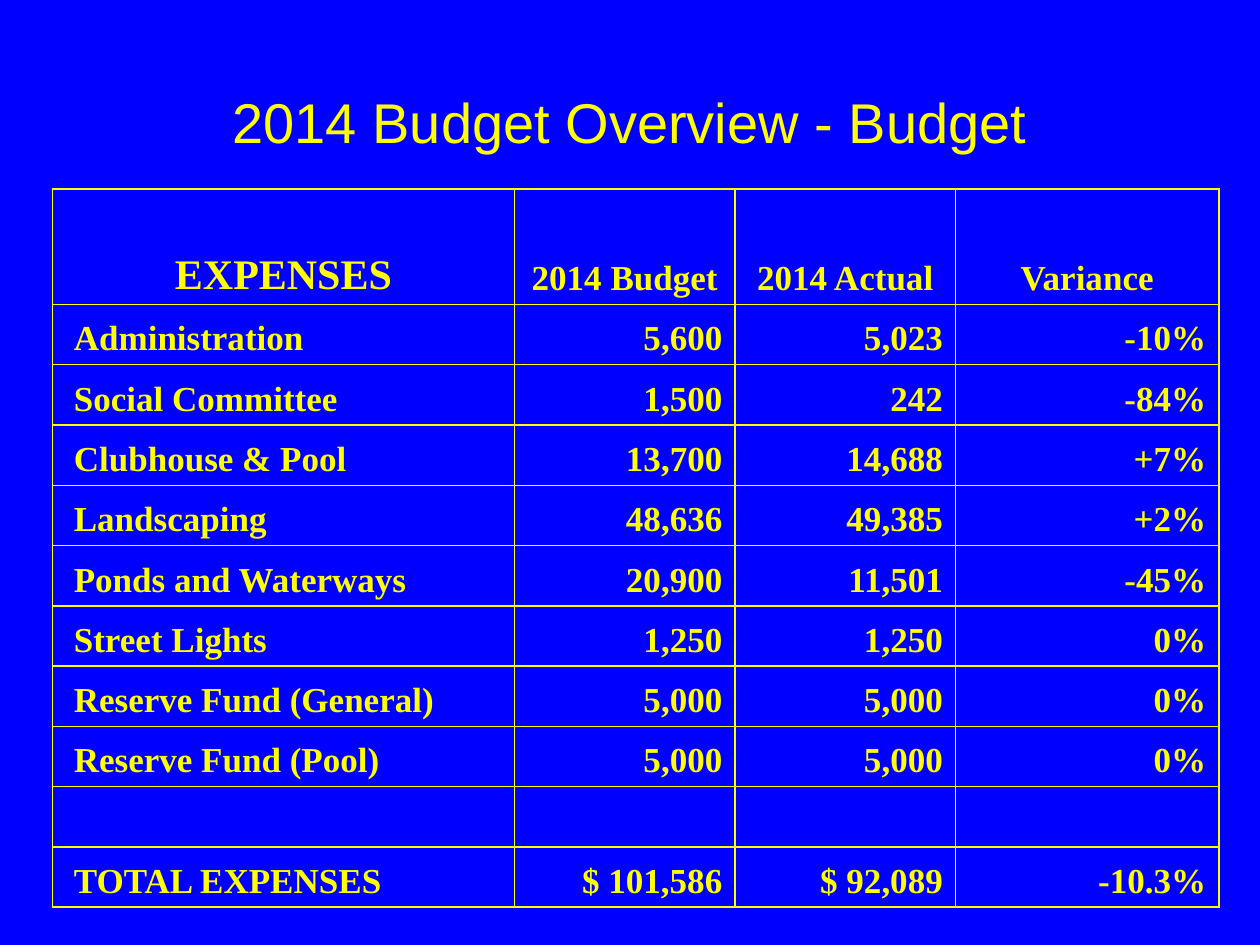
from dataclasses import dataclass

from lxml import etree
from pptx import Presentation
from pptx.dml.color import RGBColor
from pptx.enum import text
from pptx.oxml import ns
from pptx.util import Pt


@dataclass(frozen=True)
class Theme:
    background: str = "0000FF"
    ink: str = "FFFF00"
    title_font: str = "Arial"
    table_font: str = "Times New Roman"
    title_size: float = 32
    heading_size: float = 24
    body_size: float = 20
    border: float = 1


@dataclass(frozen=True)
class Expense:
    name: str = ""
    budget: str = ""
    actual: str = ""
    variance: str = ""

    def values(self) -> tuple:
        return self.name, self.budget, self.actual, self.variance


THEME = Theme()
ALIGN = text.PP_ALIGN
HEADER = Expense("EXPENSES", "2014 Budget", "2014 Actual", "Variance")
EXPENSES = [
    Expense("Administration", "5,600", "5,023", "-10%"),
    Expense("Social Committee", "1,500", "242", "-84%"),
    Expense("Clubhouse & Pool", "13,700", "14,688", "+7%"),
    Expense("Landscaping", "48,636", "49,385", "+2%"),
    Expense("Ponds and Waterways", "20,900", "11,501", "-45%"),
    Expense("Street Lights", "1,250", "1,250", "0%"),
    Expense("Reserve Fund (General)", "5,000", "5,000", "0%"),
    Expense("Reserve Fund (Pool)", "5,000", "5,000", "0%"),
    Expense(),
    Expense("TOTAL EXPENSES", "$ 101,586", "$ 92,089", "-10.3%"),
]
COLUMN_WIDTHS = (264, 126, 126, 150.5)
HEADER_HEIGHT, ROW_HEIGHT = 66, 34.45
NAME_INDENT = 12.2


def write(tf, value: str, font: str, size: float, align, bold: bool = False) -> None:
    tf.text = value
    p = tf.paragraphs[0]
    p.alignment = align
    for r in p.runs:
        r.font.name, r.font.size, r.font.bold = font, Pt(size), bold
        r.font.color.rgb = RGBColor.from_string(THEME.ink)


def add_borders(cell) -> None:
    """Outline all four sides; the lines must precede the cell's fill."""
    tc_pr = cell._tc.get_or_add_tcPr()
    for i, side in enumerate(("a:lnL", "a:lnR", "a:lnT", "a:lnB")):
        ln = etree.Element(ns.qn(side), w=str(Pt(THEME.border)))
        fill = etree.SubElement(ln, ns.qn("a:solidFill"))
        etree.SubElement(fill, ns.qn("a:srgbClr"), val=THEME.ink)
        tc_pr.insert(i, ln)


def add_title(s, value: str) -> None:
    sp = s.shapes.add_textbox(Pt(54), Pt(48), Pt(612), Pt(42))
    tf = sp.text_frame
    tf.word_wrap = True
    tf.vertical_anchor = text.MSO_ANCHOR.MIDDLE
    write(tf, value, THEME.title_font, THEME.title_size, ALIGN.CENTER)


def add_expense_table(s, rows: list[Expense]) -> None:
    heights = [HEADER_HEIGHT] + [ROW_HEIGHT] * (len(rows) - 1)
    table = s.shapes.add_table(
        len(rows), len(COLUMN_WIDTHS), Pt(30), Pt(108),
        Pt(sum(COLUMN_WIDTHS)), Pt(sum(heights))).table
    table.first_row = table.horz_banding = False
    for column, width in zip(table.columns, COLUMN_WIDTHS):
        column.width = Pt(width)
    for i, (expense, height) in enumerate(zip(rows, heights)):
        table.rows[i].height = Pt(height)
        for j, value in enumerate(expense.values()):
            cell = table.cell(i, j)
            cell.fill.background()
            add_borders(cell)
            cell.vertical_anchor = text.MSO_ANCHOR.BOTTOM
            size = THEME.body_size
            if i == 0:
                align = ALIGN.CENTER
                if j == 0:
                    size = THEME.heading_size
            elif j == 0:
                align = ALIGN.LEFT
                cell.margin_left = Pt(NAME_INDENT)
            else:
                align = ALIGN.RIGHT
            write(cell.text_frame, value, THEME.table_font, size, align, bold=True)


def main() -> None:
    prs = Presentation()
    prs.slide_width, prs.slide_height = Pt(720), Pt(540)
    s = prs.slides.add_slide(prs.slide_layouts[6])
    s.background.fill.solid()
    s.background.fill.fore_color.rgb = RGBColor.from_string(THEME.background)
    add_title(s, "2014 Budget Overview - Budget")
    add_expense_table(s, [HEADER, *EXPENSES])
    prs.save("out.pptx")


if __name__ == "__main__":
    main()
